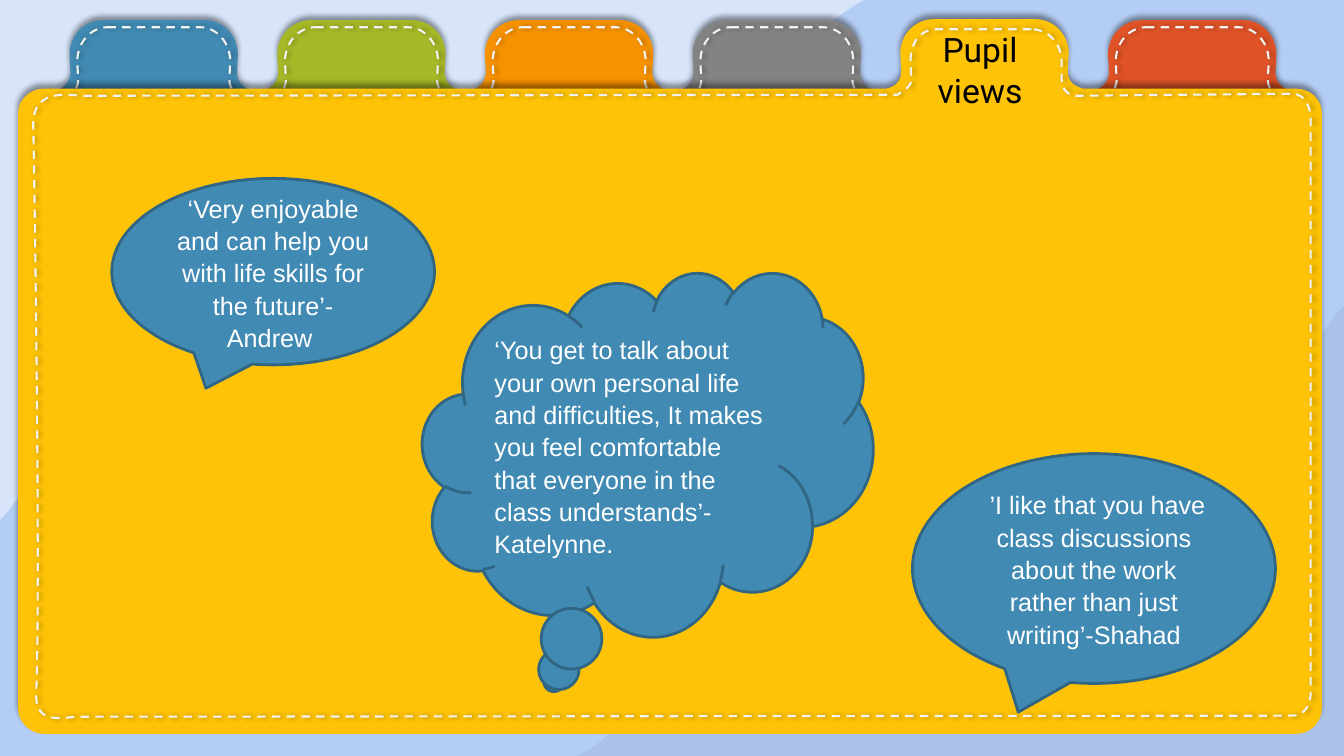
import dataclasses
import pptx
import pptx.dml.color
import pptx.enum.dml
import pptx.enum.shapes
import pptx.enum.text
import pptx.oxml
import pptx.oxml.ns
import pptx.util


@dataclasses.dataclass
class Theme:
    back: str = "6D9EEB"
    white: str = "FFFFFF"
    black: str = "000000"
    stitch: str = "F2F2F2"
    folder: str = "FEC306"
    bubble: str = "418AB3"
    edge: str = "306684"
    tabs: tuple = ("418AB3", "A6B727", "F69200", "838383", None, "DF5327")
    head: str = "Roboto"
    body: str = "Arial"
    large: int = 24
    small: int = 18


theme = Theme()
rgb = pptx.dml.color.RGBColor.from_string
qn = pptx.oxml.ns.qn
middle = pptx.enum.text.MSO_ANCHOR.MIDDLE
center = pptx.enum.text.PP_ALIGN.CENTER
left = pptx.enum.text.PP_ALIGN.LEFT

deck = pptx.Presentation()
deck.slide_width = pptx.util.Inches(13.33)
deck.slide_height = pptx.util.Inches(7.5)
slide = deck.slides.add_slide(deck.slide_layouts[5])
shapes = slide.shapes
slide.background.fill.solid()
slide.background.fill.fore_color.rgb = rgb(theme.back)

# The slide is a grid of 1333 columns by 750 rows
col = deck.slide_width / 1333
row = deck.slide_height / 750


def paint(shape, fill=None, line=None, width=0, alpha=100, cast=None):
    """Set fill, line and shadow; cast is (distance in points, degrees)."""
    shape.shadow.inherit = False
    if fill:
        shape.fill.solid()
        shape.fill.fore_color.rgb = rgb(fill)
        if alpha < 100:
            color = shape._element.spPr.find(".//" + qn("a:srgbClr"))
            color.append(color.makeelement(qn("a:alpha"), {"val": str(alpha * 1000)}))
    else:
        shape.fill.background()
    if line:
        shape.line.color.rgb = rgb(line)
        shape.line.width = pptx.util.Pt(width)
    else:
        shape.line.fill.background()
    if cast:
        gap, turn = cast
        effect = shape._element.spPr.find(qn("a:effectLst"))
        effect.append(pptx.oxml.parse_xml(
            f'<a:outerShdw {pptx.oxml.ns.nsdecls("a")} blurRad="{pptx.util.Pt(4)}" '
            f'dist="{pptx.util.Pt(gap)}" dir="{turn * 60000}" rotWithShape="0">'
            f'<a:srgbClr val="{theme.black}"><a:alpha val="40000"/></a:srgbClr></a:outerShdw>'))


def outline(path, x=0, y=0, zoom=1):
    """Draw a closed path of points and cubic curves (six numbers each)."""
    parts = [[(round((x + px * zoom) * col), round((y + py) * row))
              for px, py in zip(part[::2], part[1::2])] for part in path]
    pen = shapes.build_freeform(*parts[0][0], scale=1.0)
    pen.add_line_segments([part[-1] for part in parts[1:]], close=True)
    shape = pen.convert_to_shape()
    lines = list(shape._element.spPr.iter(qn("a:lnTo")))
    for line, part in zip(lines, parts[1:]):
        if len(part) == 3:
            curve = line.makeelement(qn("a:cubicBezTo"), {})
            for px, py in part:
                spot = {"x": str(px - shape.left), "y": str(py - shape.top)}
                curve.append(line.makeelement(qn("a:pt"), spot))
            line.getparent().replace(line, curve)
    return shape


# Backdrop
veil = shapes.add_shape(pptx.enum.shapes.MSO_SHAPE.RECTANGLE, 0, 0,
                        deck.slide_width, deck.slide_height)
paint(veil, theme.white, alpha=49)
low = [(1333, 303), (1268, 372, 1221, 559, 1137, 511), (1053, 463, 1023, 396, 935, 538),
       (847, 680, 819, 528, 758, 564), (698, 599, 646, 712, 573, 750), (1333, 750)]
high = [(0, 516), (74, 436, 127, 221, 222, 276), (316, 331, 350, 410, 449, 245),
        (548, 81, 580, 256, 648, 215), (716, 174, 774, 44, 857, 0), (0, 0)]
paint(outline(low), theme.black, alpha=5)
paint(outline(high), theme.white, alpha=47)

# Tabs, each with its stitching; the folder itself fills the gap
tab = [(48, 0), (149, 0), (167, 0, 182, 15, 182, 34), (181, 52),
       (181, 61, 188, 69, 197, 69), (0, 69), (9, 69, 16, 61, 16, 52),
       (15, 34), (15, 15, 30, 0, 48, 0)]
seams = []
for place, color in enumerate(theme.tabs):
    if color:
        x = 54 + 206 * place
        paint(outline(tab, x, 20), color, cast=(3, 270))
        seams.append(outline(tab, x + 9, 27, 179 / 197))

folder = [(926, 19), (1027, 19), (1045, 19, 1060, 34, 1060, 53), (1059, 71),
          (1059, 78, 1063, 84, 1069, 86), (1074, 88), (1286, 88),
          (1300, 88, 1311, 99, 1311, 112), (1311, 703), (1311, 716, 1300, 728, 1286, 728),
          (43, 728), (30, 728, 18, 716, 18, 703), (18, 112), (18, 99, 30, 88, 43, 88),
          (879, 88), (885, 86), (890, 84, 894, 78, 894, 71), (893, 53),
          (893, 34, 908, 19, 926, 19)]
hem = [(1023, 29), (929, 29), (912, 29, 903, 43, 903, 62), (904, 79),
       (904, 86, 895, 91, 890, 94), (83, 95), (70, 95, 33, 86, 33, 123),
       (35, 222, 40, 588, 36, 686), (34, 719, 59, 712, 77, 711), (1281, 710),
       (1294, 710, 1300, 700, 1300, 686), (1300, 119),
       (1300, 106, 1294, 93, 1282, 93), (1067, 95), (1062, 94),
       (1056, 91, 1053, 86, 1053, 79), (1053, 62), (1053, 43, 1040, 29, 1023, 29)]
paint(outline(folder), theme.folder, cast=(3, 270))
seams.append(outline(hem))
for seam in seams:
    paint(seam, line=theme.stitch, width=1.5, cast=(1.5, 0))
    seam.line.dash_style = pptx.enum.dml.MSO_LINE.DASH

# Title on the open tab
title = shapes.title
shapes._spTree.append(title._element)
title.left, title.width = round(905 * col), round(134 * col)
title.top, title.height = round(44 * row), round(50 * row)
frame = title.text_frame
frame.text = "Pupil views"
frame.word_wrap = True
frame.auto_size = pptx.enum.text.MSO_AUTO_SIZE.NONE
frame.vertical_anchor = middle
frame.margin_left = frame.margin_right = pptx.util.Inches(0.1)
frame.margin_top = frame.margin_bottom = pptx.util.Inches(0.1)
frame.paragraphs[0].alignment = center
font = frame.paragraphs[0].runs[0].font
font.name, font.size = theme.head, pptx.util.Pt(theme.large)
font.color.rgb = rgb(theme.black)

# Quotes
oval = pptx.enum.shapes.MSO_SHAPE.OVAL_CALLOUT
cloud = pptx.enum.shapes.MSO_SHAPE.CLOUD_CALLOUT
quotes = [
    (oval, 111, 177, 320, 185, center,
     "‘Very enjoyable and can help you with life skills for the future’- Andrew "),
    (cloud, 419, 270, 447, 361, left,
     "‘You get to talk about your own personal life and difficulties, It makes you feel "
     "comfortable that everyone in the class understands’- Katelynne."),
    (oval, 905, 450, 360, 228, center,
     " ’I like that you have class discussions about the work rather than just "
     "writing’-Shahad"),
]
for kind, x, y, wide, tall, align, words in quotes:
    bubble = shapes.add_shape(kind, round(x * col), round(y * row),
                              round(wide * col), round(tall * row))
    paint(bubble, theme.bubble, theme.edge, 2)
    frame = bubble.text_frame
    frame.text = words
    frame.word_wrap = True
    frame.vertical_anchor = middle
    para = frame.paragraphs[0]
    para.alignment = align
    para.line_spacing = 1.07
    para.space_after = pptx.util.Pt(8)
    font = para.runs[0].font
    font.name, font.size = theme.body, pptx.util.Pt(theme.small)
    font.color.rgb = rgb(theme.white)

deck.save("out.pptx")
